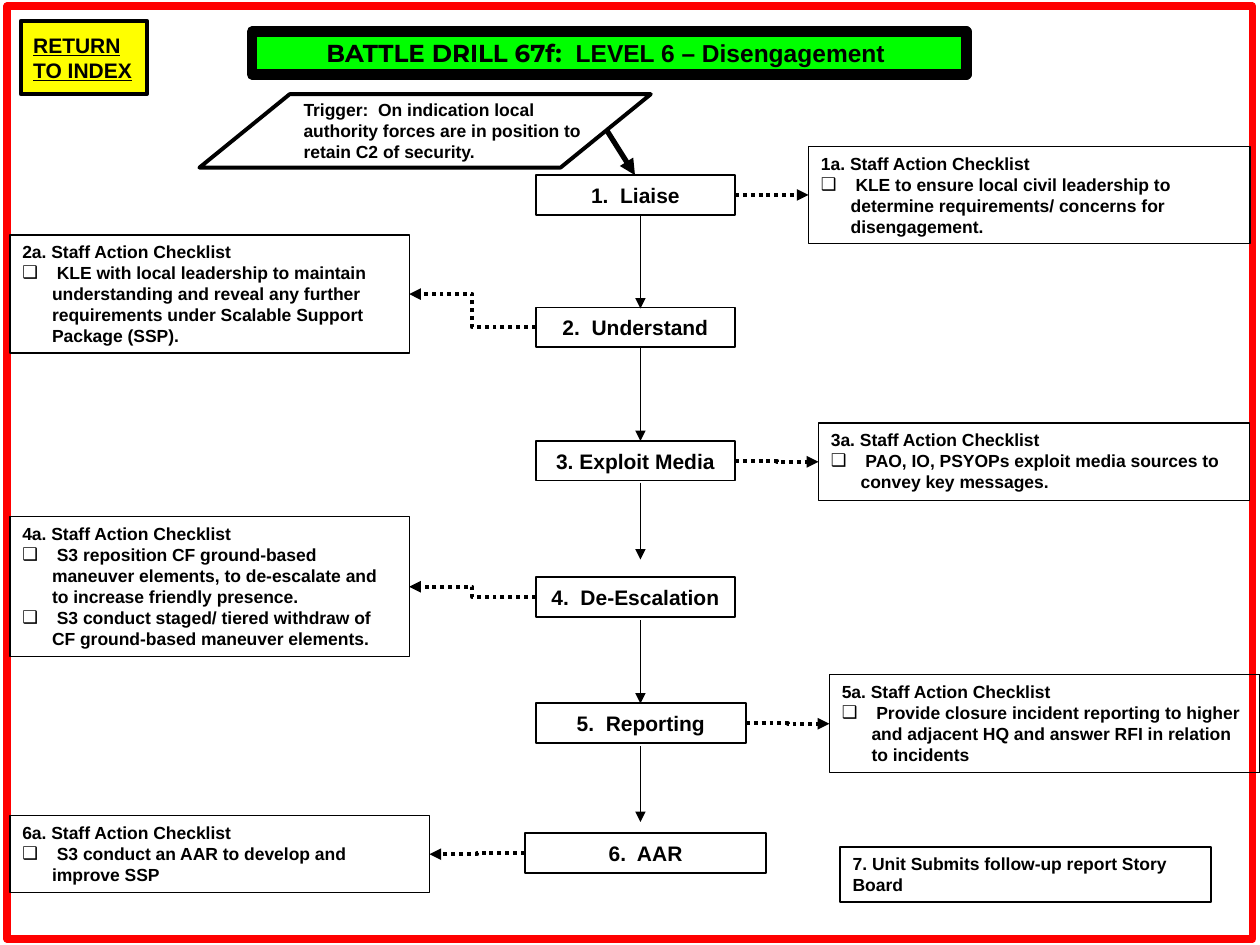
from dataclasses import dataclass
from lxml.etree import SubElement
from pptx import Presentation
from pptx.dml.color import RGBColor
from pptx.enum.dml import MSO_LINE
from pptx.enum.shapes import MSO_CONNECTOR, MSO_SHAPE
from pptx.enum.text import MSO_ANCHOR, MSO_AUTO_SIZE, PP_ALIGN
from pptx.oxml.ns import qn
from pptx.util import Cm, Pt


@dataclass
class Theme:
    ink: RGBColor = RGBColor(0, 0, 0)
    red: RGBColor = RGBColor(255, 0, 0)
    green: RGBColor = RGBColor(0, 255, 0)
    yellow: RGBColor = RGBColor(255, 255, 0)
    font: str = "Arial"
    accent: str = "Montserrat"
    head: Pt = Pt(14)
    label: Pt = Pt(12)
    note: Pt = Pt(10)


theme = Theme()


def style(box, size, line=None, fill=None, align=PP_ALIGN.LEFT,
          anchor=MSO_ANCHOR.TOP, color=theme.ink):
    """Set the outline, fill and text format of a box."""
    if line:
        box.line.color.rgb = color
        box.line.width = Pt(line)
    if fill:
        box.fill.solid()
        box.fill.fore_color.rgb = fill
    else:
        box.fill.background()
    box.shadow.inherit = False
    frame = box.text_frame
    frame.word_wrap = True
    frame.auto_size = MSO_AUTO_SIZE.NONE
    frame.vertical_anchor = anchor
    for para in frame.paragraphs:
        para.alignment = align
        for run in para.runs:
            run.font.name = theme.font
            run.font.size = size
            run.font.bold = True
            run.font.color.rgb = theme.ink


def arrow(ends, width, kind=MSO_CONNECTOR.STRAIGHT, dash=None):
    link = shapes.add_connector(kind, *map(Cm, ends))
    link.line.color.rgb = theme.ink
    link.line.width = Pt(width)
    if dash:
        link.line.dash_style = dash
    SubElement(link.line._get_or_add_ln(), qn("a:tailEnd"), type="triangle")
    SubElement(link._element.spPr, qn("a:effectLst"))
    return link


deck = Presentation()
deck.slide_width, deck.slide_height = Cm(25.4), Cm(19.05)
slide = deck.slides.add_slide(deck.slide_layouts[5])
shapes = slide.shapes

# Title
title = shapes.title
title.left, title.top, title.width, title.height = map(Cm, (5.08, 0.64, 14.4, 0.86))
para = title.text_frame.paragraphs[0]
para.text = "BATTLE DRILL 67f:"
para.add_run().text = "  LEVEL 6 – Disengagement "
style(title, theme.head, 6, theme.green, PP_ALIGN.CENTER, MSO_ANCHOR.MIDDLE)
para.runs[0].font.name = theme.accent

# Page frame and index button
border = shapes.add_shape(MSO_SHAPE.RECTANGLE, *map(Cm, (0.15, 0.13, 25.1, 18.8)))
style(border, theme.note, 4.5, color=theme.red)
index = shapes.add_shape(MSO_SHAPE.RECTANGLE, *map(Cm, (0.42, 0.42, 2.54, 1.48)))
index.text_frame.text = "RETURN\nTO INDEX"
style(index, theme.label, 2.25, theme.yellow, anchor=MSO_ANCHOR.MIDDLE)
index.text_frame.word_wrap = False
for para in index.text_frame.paragraphs:
    para.runs[0].font.underline = True

# Trigger
cue = shapes.add_textbox(*map(Cm, (5.87, 1.88, 6.2, 1.55)))
cue.text_frame.text = ("Trigger:  On indication local authority forces are in "
                       "position to retain C2 of security.")
style(cue, theme.note)
slant = shapes.add_shape(MSO_SHAPE.FLOWCHART_DATA, *map(Cm, (4.02, 1.9, 9.1, 1.48)))
style(slant, theme.note, 2.25)
arrow((12.24, 2.64, 12.8, 3.53), 3)

# Steps: label, left, top, width; then the checklist box and its items
steps = [
    ("1.  Liaise", 10.8, 3.53, 4.02, (16.3, 2.95, 8.9, 1.96),
     ["KLE to ensure local civil leadership to determine requirements/ "
      "concerns for disengagement."]),
    ("2.  Understand", 10.8, 6.2, 4.02, (0.2, 4.74, 8.05, 2.38),
     ["KLE with local leadership to maintain understanding and reveal any "
      "further requirements under Scalable Support Package (SSP)."]),
    ("3. Exploit Media", 10.8, 8.89, 4.02, (16.5, 8.53, 8.69, 1.56),
     ["PAO, IO, PSYOPs exploit media sources to convey key messages."]),
    ("4.  De-Escalation", 10.8, 11.64, 4.02, (0.2, 10.42, 8.05, 2.82),
     ["S3 reposition CF ground-based maneuver elements, to de-escalate and "
      "to increase friendly presence.",
      "S3 conduct staged/ tiered withdraw of CF ground-based maneuver elements."]),
    ("5.  Reporting", 10.8, 14.18, 4.24, (16.72, 13.6, 8.68, 1.98),
     ["Provide closure incident reporting to higher and adjacent HQ and "
      "answer RFI in relation to incidents"]),
    ("6.  AAR", 10.58, 16.8, 4.87, (0.2, 16.44, 8.46, 1.56),
     ["S3 conduct an AAR to develop and improve SSP"]),
]
LEFT, RIGHT = 1, 3  # connection sites of a rectangle
for num, (label, x, y, width, area, items) in enumerate(steps, 1):
    step = shapes.add_shape(MSO_SHAPE.RECTANGLE, *map(Cm, (x, y, width, 0.8)))
    step.text_frame.text = label
    style(step, theme.label, 1, None, PP_ALIGN.CENTER, MSO_ANCHOR.MIDDLE)

    note = shapes.add_shape(MSO_SHAPE.RECTANGLE, *map(Cm, area))
    frame = note.text_frame
    frame.text = f"{num}a. Staff Action Checklist"
    for item in items:
        para = frame.add_paragraph()
        para.text = " " + item
        props = para._p.get_or_add_pPr()
        props.set("marL", str(Cm(0.6)))
        props.set("indent", str(-Cm(0.6)))
        SubElement(props, qn("a:buFont"), typeface=theme.font)
        SubElement(props, qn("a:buChar"), char="❑")
    style(note, theme.note, 0.75)

    link = arrow((0, 0, 1, 1), 2.25, MSO_CONNECTOR.ELBOW, MSO_LINE.ROUND_DOT)
    start, end = (RIGHT, LEFT) if num % 2 else (LEFT, RIGHT)
    link.begin_connect(step, start)
    link.end_connect(note, end)

# Flow from step to step
for top, foot in [(4.32, 6.22), (6.99, 8.89), (9.73, 11.28),
                  (12.5, 14.18), (15.04, 16.57)]:
    arrow((12.91, top, 12.91, foot), 0.75)

# Follow-up
last = shapes.add_shape(MSO_SHAPE.RECTANGLE, *map(Cm, (16.94, 17.07, 7.47, 1.12)))
last.text_frame.text = "7. Unit Submits follow-up report Story Board"
style(last, theme.note, 1)

deck.save("out.pptx")
